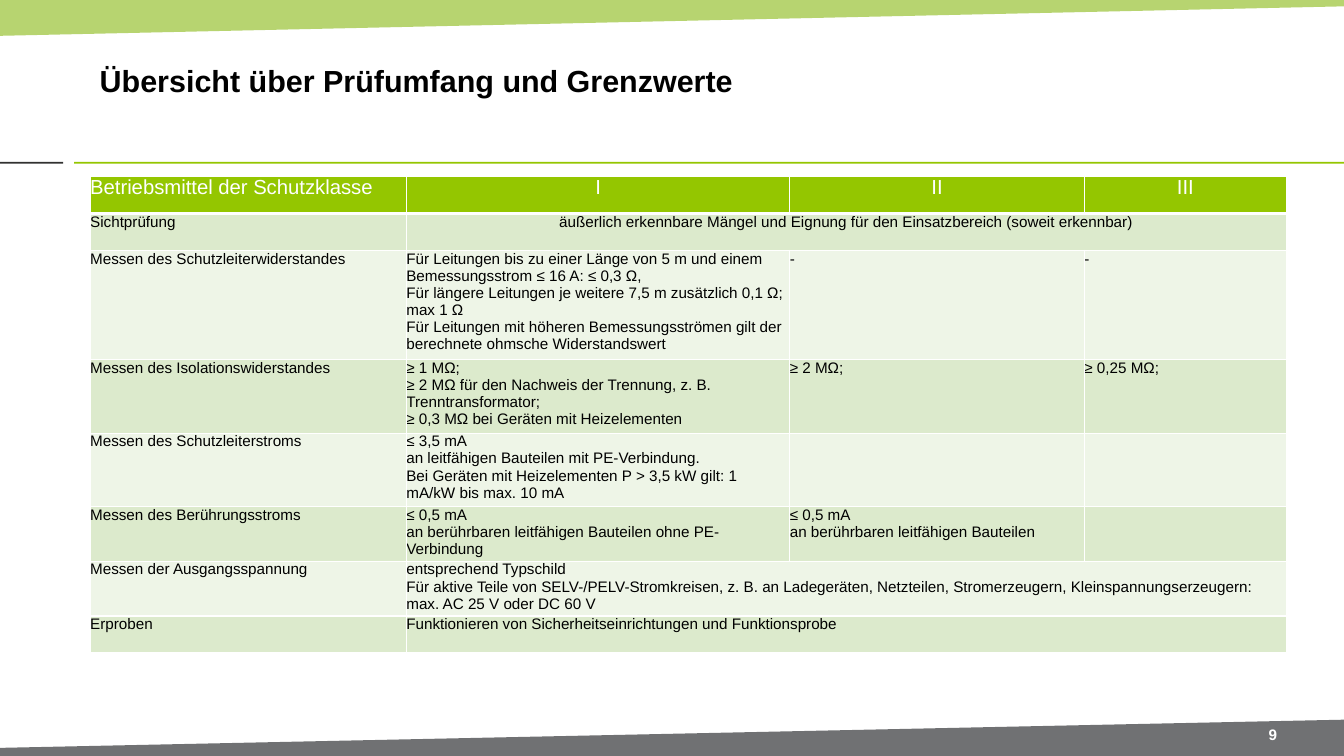
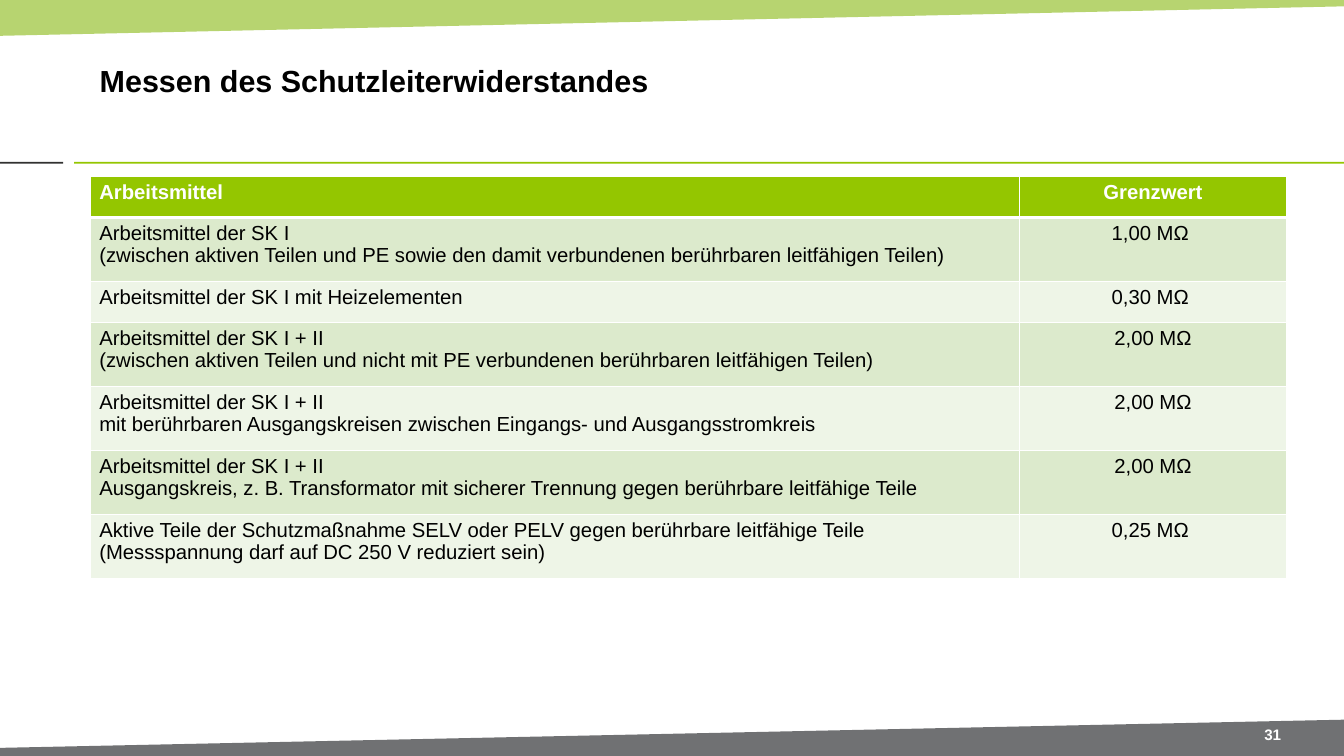
from dataclasses import dataclass

from lxml import etree
from pptx import Presentation
from pptx.dml.color import RGBColor
from pptx.enum.shapes import MSO_SHAPE
from pptx.enum.text import MSO_ANCHOR, PP_ALIGN
from pptx.oxml.ns import qn
from pptx.util import Pt

RECTANGLE = MSO_SHAPE.RECTANGLE
MIDDLE = MSO_ANCHOR.MIDDLE
LEFT, CENTER = PP_ALIGN.LEFT, PP_ALIGN.CENTER

BAND_GREEN = RGBColor(0x95, 0xC0, 0x2A)
GREEN = RGBColor(0x94, 0xC6, 0x00)
ROW_DARK = RGBColor(0xDC, 0xEA, 0xCC)
ROW_LIGHT = RGBColor(0xEE, 0xF5, 0xE7)
CHARCOAL = RGBColor(0x31, 0x31, 0x30)
GREY = RGBColor(0x70, 0x71, 0x73)
BLACK = RGBColor(0, 0, 0)
WHITE = RGBColor(0xFF, 0xFF, 0xFF)

FONT = "Arial"
SLIDE_W, SLIDE_H = 1058.4, 595.4
TABLE_LEFT, TABLE_TOP = 71, 139
RULE_TOP, RULE_H = 127.4, 1.5


@dataclass(frozen=True)
class TableSpec:
    widths: list[float]
    heights: list[float]
    rows: list[list[str]]  # the last cell of a short row spans the rest
    centered: set[tuple[int, int]]
    margins: tuple[float, float]
    body_size: int
    header_bold: bool


@dataclass(frozen=True)
class SlideSpec:
    title: str
    number: int
    table: TableSpec


OVERVIEW = TableSpec(
    widths=[249, 302, 232, 159],
    heights=[29, 29, 80.4, 53.7, 53.7, 40.2, 40.2, 29],
    rows=[
        ["Betriebsmittel der Schutzklasse", "I", "II", "III"],
        ["Sichtprüfung",
         "äußerlich erkennbare Mängel und Eignung für den Einsatzbereich (soweit erkennbar)"],
        ["Messen des Schutzleiterwiderstandes",
         "Für Leitungen bis zu einer Länge von 5 m und einem Bemessungsstrom ≤ 16 A: ≤ 0,3 Ω,\n"
         "Für längere Leitungen je weitere 7,5 m zusätzlich 0,1 Ω; max 1 Ω\n"
         "Für Leitungen mit höheren Bemessungsströmen gilt der berechnete ohmsche "
         "Widerstandswert", "-", "-"],
        ["Messen des Isolationswiderstandes",
         "≥ 1 MΩ;\n≥ 2 MΩ für den Nachweis der Trennung, z. B.\nTrenntransformator;\n"
         "≥ 0,3 MΩ bei Geräten mit Heizelementen", "≥ 2 MΩ;", "≥ 0,25 MΩ;"],
        ["Messen des Schutzleiterstroms",
         "≤ 3,5 mA\nan leitfähigen Bauteilen mit PE-Verbindung.\n"
         "Bei Geräten mit Heizelementen P > 3,5 kW gilt: 1 mA/kW bis max. 10 mA", "", ""],
        ["Messen des Berührungsstroms",
         "≤ 0,5 mA\nan berührbaren leitfähigen Bauteilen ohne PE-Verbindung",
         "≤ 0,5 mA\nan berührbaren leitfähigen Bauteilen", ""],
        ["Messen der Ausgangsspannung",
         "entsprechend Typschild\nFür aktive Teile von SELV-/PELV-Stromkreisen, z. B. an "
         "Ladegeräten, Netzteilen, Stromerzeugern, Kleinspannungserzeugern: "
         "max. AC 25 V oder DC 60 V"],
        ["Erproben", "Funktionieren von Sicherheitseinrichtungen und Funktionsprobe"],
    ],
    centered={(0, 1), (0, 2), (0, 3), (1, 1)},
    margins=(0, 0), body_size=12, header_bold=False,
)

LIMITS = TableSpec(
    widths=[732, 210],
    heights=[32.2, 50.4, 32.2, 50.4, 50.4, 50.4, 50.4],
    rows=[
        ["Arbeitsmittel", "Grenzwert"],
        ["Arbeitsmittel der SK I\n(zwischen aktiven Teilen und PE sowie den damit verbundenen "
         "berührbaren leitfähigen Teilen)", "1,00 MΩ "],
        ["Arbeitsmittel der SK I mit Heizelementen", "0,30 MΩ "],
        ["Arbeitsmittel der SK I + II\n(zwischen aktiven Teilen und nicht mit PE verbundenen "
         "berührbaren leitfähigen Teilen)", "2,00 MΩ"],
        ["Arbeitsmittel der SK I + II\nmit berührbaren Ausgangskreisen zwischen Eingangs- "
         "und Ausgangsstromkreis", "2,00 MΩ"],
        ["Arbeitsmittel der SK I + II\nAusgangskreis, z. B. Transformator mit sicherer "
         "Trennung gegen berührbare leitfähige Teile", "2,00 MΩ"],
        ["Aktive Teile der Schutzmaßnahme SELV oder PELV gegen berührbare leitfähige Teile "
         "(Messspannung darf auf DC 250 V reduziert sein)", "0,25 MΩ "],
    ],
    centered={(row, 1) for row in range(7)},
    margins=(7.2, 3.6), body_size=16, header_bold=True,
)

SLIDES = [
    SlideSpec("Übersicht über Prüfumfang und Grenzwerte", 9, OVERVIEW),
    SlideSpec("Messen des Schutzleiterwiderstandes", 31, LIMITS),
]


def set_text(p, text: str, size: float, color: RGBColor, bold: bool, align=LEFT) -> None:
    p.text = text
    p.alignment = align
    p.font.name, p.font.size, p.font.bold = FONT, Pt(size), bold
    p.font.color.rgb = color


def paint(sp, color: RGBColor) -> None:
    sp.shadow.inherit = False
    sp.fill.solid()
    sp.fill.fore_color.rgb = color
    sp.line.fill.background()


def add_band(s, points: list[tuple[float, float]], color: RGBColor):
    builder = s.shapes.build_freeform(Pt(points[0][0]), Pt(points[0][1]))
    builder.add_line_segments([(Pt(x), Pt(y)) for x, y in points[1:]], close=True)
    sp = builder.convert_to_shape()
    paint(sp, color)
    return sp


def add_label(s, box: tuple[float, float, float, float], text: str, size: float,
              color: RGBColor, align=LEFT) -> None:
    tf = s.shapes.add_textbox(*map(Pt, box)).text_frame
    tf.word_wrap = True
    tf.vertical_anchor = MIDDLE
    tf.margin_left = tf.margin_right = Pt(7.9)
    tf.margin_top = tf.margin_bottom = Pt(4.3)
    set_text(tf.paragraphs[0], text, size, color, True, align)


def add_frame(s, title: str, number: int) -> None:
    # Slanted bands at top and bottom
    top = add_band(s, [(0, 0), (SLIDE_W, 0), (SLIDE_W, 5), (0, 28.2)], BAND_GREEN)
    color = top.fill._xPr.find(".//" + qn("a:srgbClr"))
    etree.SubElement(color, qn("a:alpha"), val="67000")
    add_band(s, [(SLIDE_W, SLIDE_H), (0, SLIDE_H), (0, 589), (SLIDE_W, 566.8)], GREY)

    # Two-part rule below the title
    for left, right, color in ((0, 49.7, CHARCOAL), (58.3, SLIDE_W, GREEN)):
        paint(s.shapes.add_shape(RECTANGLE, Pt(left), Pt(RULE_TOP), Pt(right - left),
                                 Pt(RULE_H)), color)

    # Title and page number
    add_label(s, (70.6, 20.2, 831, 85.7), title, 24, BLACK)
    add_label(s, (971.3, 568.1, 62, 21), str(number), 12, WHITE, CENTER)


def set_borders(cell, row: int) -> None:
    tc_pr = cell._tc.get_or_add_tcPr()
    top, bottom = (3 if row == 1 else 1), (3 if row == 0 else 1)
    for side, width in (("L", 1), ("R", 1), ("T", top), ("B", bottom)):
        ln = etree.SubElement(tc_pr, qn(f"a:ln{side}"), w=str(Pt(width)))
        fill = etree.SubElement(ln, qn("a:solidFill"))
        etree.SubElement(fill, qn("a:srgbClr"), val=str(WHITE))


def add_grid(s, spec: TableSpec) -> None:
    last = len(spec.widths) - 1
    table = s.shapes.add_table(len(spec.rows), last + 1, Pt(TABLE_LEFT), Pt(TABLE_TOP),
                               Pt(sum(spec.widths)), Pt(sum(spec.heights))).table
    table.horz_banding = False
    for column, width in zip(table.columns, spec.widths):
        column.width = Pt(width)
    for i, (row, height) in enumerate(zip(spec.rows, spec.heights)):
        table.rows[i].height = Pt(height)
        header = i == 0
        # Colours and borders for every cell, merged ones too
        for j in range(last + 1):
            cell = table.cell(i, j)
            set_borders(cell, i)
            cell.fill.solid()
            cell.fill.fore_color.rgb = GREEN if header else (ROW_DARK if i % 2 else ROW_LIGHT)
            cell.margin_left = cell.margin_right = Pt(spec.margins[0])
            cell.margin_top = cell.margin_bottom = Pt(spec.margins[1])
        # Text
        for j, text in enumerate(row):
            set_text(table.cell(i, j).text_frame.paragraphs[0], text,
                     16 if header else spec.body_size, WHITE if header else BLACK,
                     header and spec.header_bold,
                     CENTER if (i, j) in spec.centered else LEFT)
        if len(row) <= last:
            table.cell(i, len(row) - 1).merge(table.cell(i, last))


def main() -> None:
    prs = Presentation()
    prs.slide_width, prs.slide_height = Pt(SLIDE_W), Pt(SLIDE_H)
    for spec in SLIDES:
        s = prs.slides.add_slide(prs.slide_layouts[6])
        add_frame(s, spec.title, spec.number)
        add_grid(s, spec.table)
    prs.save("out.pptx")


if __name__ == "__main__":
    main()
